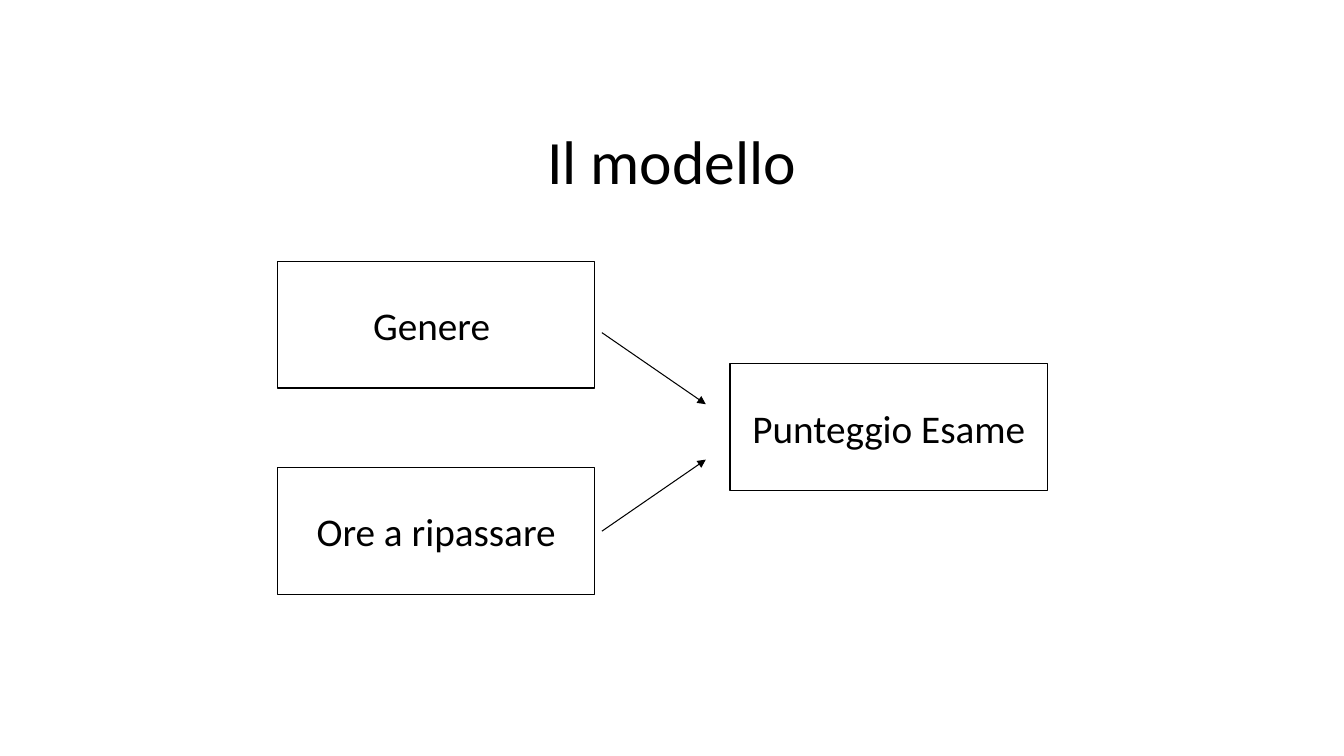
import pptx
import pptx.dml.color
import pptx.enum.shapes
import pptx.enum.text
import pptx.oxml.ns
import pptx.util
from lxml import etree
from pptx.util import Inches

BLACK = "000000"
BOX_WIDTH, BOX_HEIGHT = 3.15, 1.26
ARROW_START, ARROW_END = 5.97, 7


def color(hex_value):
    return pptx.dml.color.RGBColor.from_string(hex_value)


def format_text(shape, text, size):
    frame = shape.text_frame
    frame.text = text
    frame.vertical_anchor = pptx.enum.text.MSO_ANCHOR.MIDDLE
    para = frame.paragraphs[0]
    para.alignment = pptx.enum.text.PP_ALIGN.CENTER
    para.font.name = "Calibri"
    para.font.size = pptx.util.Pt(size)
    para.font.color.rgb = color(BLACK)
    return para


def format_line(shape):
    shape.line.color.rgb = color(BLACK)
    shape.line.width = pptx.util.Pt(0.75)


def set_title(page, text):
    title = page.shapes.title
    title.left, title.top = Inches(0), Inches(1.07)
    title.width, title.height = Inches(13.33), Inches(1.13)
    para = format_text(title, text, 44)
    para.line_spacing = 0.9


def add_box(page, text, left, top):
    box = page.shapes.add_shape(
        pptx.enum.shapes.MSO_SHAPE.RECTANGLE,
        Inches(left), Inches(top), Inches(BOX_WIDTH), Inches(BOX_HEIGHT))
    box.shadow.inherit = False
    box.fill.background()
    format_line(box)
    format_text(box, text, 28)
    box.text_frame.word_wrap = False


def add_arrow(page, start_y, end_y):
    arrow = page.shapes.add_connector(
        pptx.enum.shapes.MSO_CONNECTOR.STRAIGHT,
        Inches(ARROW_START), Inches(start_y), Inches(ARROW_END), Inches(end_y))
    format_line(arrow)
    qn = pptx.oxml.ns.qn
    properties = arrow.element.find(qn("p:spPr"))
    etree.SubElement(properties.find(qn("a:ln")), qn("a:tailEnd"), type="triangle")
    etree.SubElement(properties, qn("a:effectLst"))


def main():
    deck = pptx.Presentation()
    deck.slide_width, deck.slide_height = Inches(13.33), Inches(7.5)
    page = deck.slides.add_slide(deck.slide_layouts.get_by_name("Title Only"))
    set_title(page, "Il modello")
    add_box(page, "Genere ", 2.75, 2.59)
    add_box(page, "Ore a ripassare", 2.75, 4.64)
    add_box(page, "Punteggio Esame", 7.24, 3.61)
    add_arrow(page, 3.3, 4.01)
    add_arrow(page, 5.27, 4.56)
    deck.save("out.pptx")


if __name__ == "__main__":
    main()
